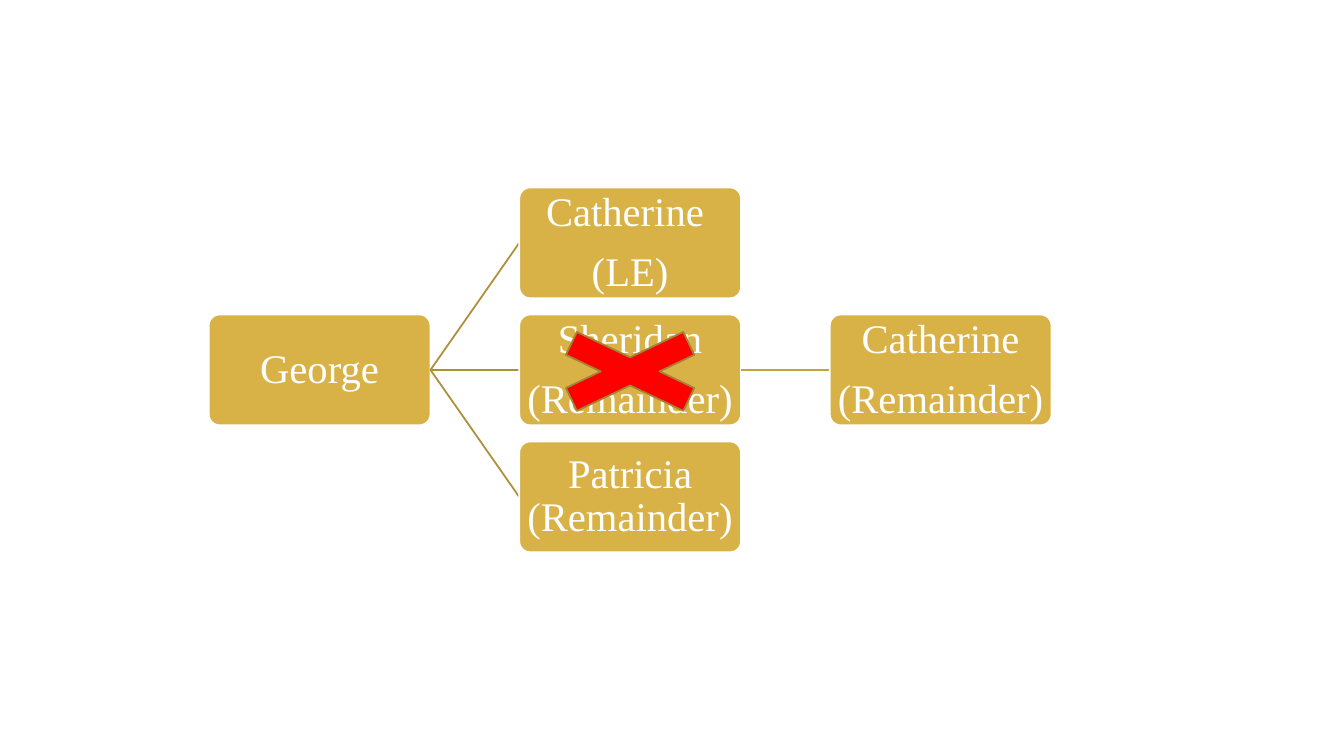
from dataclasses import dataclass

from lxml.etree import SubElement
from pptx import Presentation
from pptx.dml.color import RGBColor as Color
from pptx.enum.shapes import MSO_CONNECTOR as Connector, MSO_SHAPE as Shape
from pptx.enum.text import MSO_ANCHOR as Anchor, PP_ALIGN as Align
from pptx.oxml.ns import qn
from pptx.util import Inches, Pt

PEOPLE = [
    {"key": "george", "lines": ["George"], "column": 0, "row": 1},
    {"key": "life", "lines": ["Catherine ", "(LE)"], "column": 1, "row": 0, "parent": "george"},
    {"key": "sheridan", "lines": ["Sheridan", "(Remainder) "], "column": 1, "row": 1, "parent": "george"},
    {"key": "heir", "lines": ["Catherine", "(Remainder)"], "column": 2, "row": 1, "parent": "sheridan"},
    {"key": "patricia", "lines": ["Patricia (Remainder)"], "column": 1, "row": 2, "parent": "george"},
]
LEFT, TOP = 2.07, 1.86
COLUMN_STEP, ROW_STEP = 3.08, 1.26
BOX_WIDTH, BOX_HEIGHT = 2.2, 1.1
CROSS = (5.13, 3.15, 2.24, 1.07)
LEFT_SIDE, RIGHT_SIDE = 1, 3


@dataclass(frozen=True)
class Theme:
    gold: Color = Color.from_string("D9B247")
    white: Color = Color.from_string("FFFFFF")
    red: Color = Color.from_string("FF0000")
    cross_edge: Color = Color.from_string("A18435")
    branches: tuple = (Color.from_string("AE8F39"), Color.from_string("C5A240"))
    font: str = "Times New Roman"
    size: Pt = Pt(29)
    line: Pt = Pt(1.25)
    gap: Pt = Pt(11.5)


THEME = Theme()


def apply(target, values):
    for name, value in values.items():
        setattr(target, name, value)


def draw_line(line, color):
    line.color.rgb = color
    line.width = THEME.line


def add_figure(page, kind, place, fill, edge):
    figure = page.shapes.add_shape(kind, *map(Inches, place))
    figure.shadow.inherit = False
    figure.fill.solid()
    figure.fill.fore_color.rgb = fill
    draw_line(figure.line, edge)
    return figure


def add_branch(page, parent, color):
    branch = page.shapes.add_connector(Connector.STRAIGHT, 0, 0, 0, 0)
    branch.begin_connect(parent, RIGHT_SIDE)
    draw_line(branch.line, color)
    SubElement(branch._element.spPr, qn("a:effectLst"))
    return branch


def add_person(page, person):
    place = (LEFT + person["column"] * COLUMN_STEP, TOP + person["row"] * ROW_STEP,
             BOX_WIDTH, BOX_HEIGHT)
    box = add_figure(page, Shape.ROUNDED_RECTANGLE, place, THEME.gold, THEME.white)
    box.adjustments[0] = 0.1
    frame = box.text_frame
    margins = dict.fromkeys(["margin_left", "margin_right", "margin_top", "margin_bottom"], Inches(0.02))
    apply(frame, {"word_wrap": True, "vertical_anchor": Anchor.MIDDLE, **margins})
    frame.text = "\n".join(person["lines"])
    for para in frame.paragraphs:
        apply(para, {"alignment": Align.CENTER, "line_spacing": 0.9})
        apply(para.font, {"name": THEME.font, "size": THEME.size})
        para.font.color.rgb = THEME.white
    for para in frame.paragraphs[:-1]:
        para.space_after = THEME.gap
    return box


def main():
    deck = Presentation()
    apply(deck, {"slide_width": Inches(13.33), "slide_height": Inches(7.5)})
    page = deck.slides.add_slide(deck.slide_layouts[6])
    boxes = {}
    for person in PEOPLE:
        branch = None
        if "parent" in person:
            color = THEME.branches[person["column"] - 1]
            branch = add_branch(page, boxes[person["parent"]], color)
        box = add_person(page, person)
        boxes[person["key"]] = box
        if branch is not None:
            branch.end_connect(box, LEFT_SIDE)
    add_figure(page, Shape.MATH_MULTIPLY, CROSS, THEME.red, THEME.cross_edge)
    deck.save("out.pptx")


if __name__ == "__main__":
    main()
